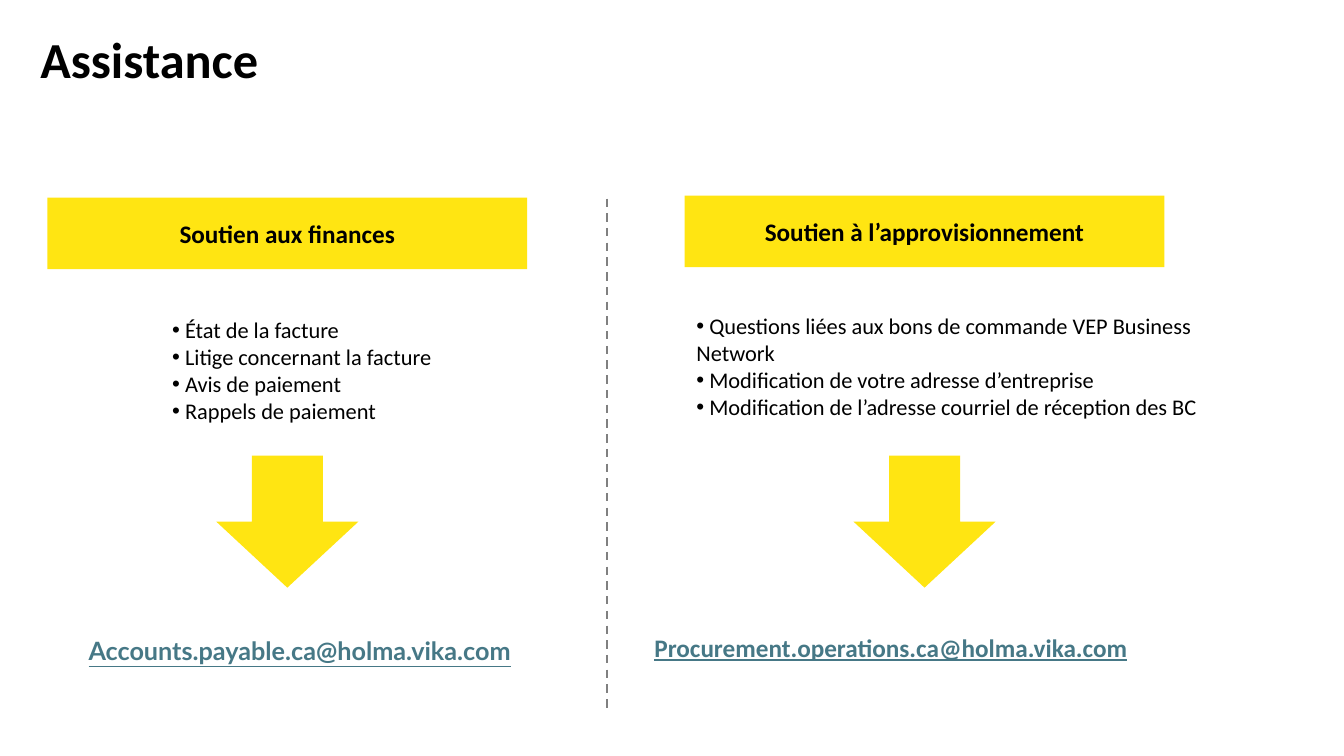
import pptx
import pptx.util
import pptx.dml.color
import pptx.enum.dml
import pptx.enum.shapes
import pptx.enum.text
import pptx.oxml
import pptx.oxml.ns

Inches = pptx.util.Inches
Pt = pptx.util.Pt
Kind = pptx.enum.shapes.MSO_SHAPE
Align = pptx.enum.text.PP_ALIGN
Anchor = pptx.enum.text.MSO_ANCHOR

COLORS = {"ink": "000000", "yellow": "FFE512", "link": "467886", "rule": "808080"}


def color(name):
    """Return the named colour."""
    return pptx.dml.color.RGBColor.from_string(COLORS[name])


def write(para, text, size, bold=False, tint="ink", face="Calibri", line=False):
    """Add one formatted run to a paragraph."""
    run = para.add_run()
    run.text = text
    font = run.font
    font.name, font.size, font.bold = face, Pt(size), bold
    font.color.rgb = color(tint)
    if line:
        font.underline = True


def block(slide, kind, x, y, w, h):
    """Add a plain yellow shape."""
    shape = slide.shapes.add_shape(kind, Inches(x), Inches(y), Inches(w), Inches(h))
    shape.shadow.inherit = False
    shape.fill.solid()
    shape.fill.fore_color.rgb = color("yellow")
    shape.line.fill.background()
    return shape


def area(slide, x, y, w, h):
    """Add a wrapping text box and return its frame."""
    frame = slide.shapes.add_textbox(Inches(x), Inches(y), Inches(w), Inches(h)).text_frame
    frame.word_wrap = True
    return frame


def heading(slide, x, y, w, h):
    """Place the slide title."""
    title = slide.shapes.title
    title.left, title.top, title.width, title.height = map(Inches, (x, y, w, h))
    frame = title.text_frame
    frame.auto_size = pptx.enum.text.MSO_AUTO_SIZE.NONE
    frame.vertical_anchor = Anchor.TOP
    para = frame.paragraphs[0]
    para.alignment = Align.LEFT
    para.line_spacing = 1.0
    write(para, "Assistance", 36, True)


def column(slide, x, y, w, label):
    """Place a banner with a down arrow centred below it."""
    banner = block(slide, Kind.RECTANGLE, x, y, w, 0.71)
    frame = banner.text_frame
    frame.vertical_anchor = Anchor.MIDDLE
    para = frame.paragraphs[0]
    para.alignment = Align.CENTER
    write(para, label, 18, True)
    wide = 1.41
    block(slide, Kind.DOWN_ARROW, x + (w - wide) / 2, 4.52, wide, 1.31)


def topics(slide, x, y, w, h, items):
    """Place a bulleted list."""
    frame = area(slide, x, y, w, h)
    for i, item in enumerate(items):
        para = frame.add_paragraph() if i else frame.paragraphs[0]
        props = para._p.get_or_add_pPr()
        props.set("marL", "0")
        props.set("indent", "0")
        font = pptx.oxml.ns.qn("a:buFont")
        props.append(props.makeelement(font, {"typeface": "Arial"}))
        mark = pptx.oxml.ns.qn("a:buChar")
        props.append(props.makeelement(mark, {"char": "•"}))
        write(para, " " + item, 16)


def mail(slide, x, y, w, h, text):
    """Place an address in a one-cell table."""
    table = slide.shapes.add_table(1, 1, Inches(x), Inches(y), Inches(w), Inches(h)).table
    table.first_row = table.horz_banding = False
    cell = table.cell(0, 0)
    cell.fill.background()
    cell.vertical_anchor = Anchor.MIDDLE
    cell.margin_left = cell.margin_right = Inches(0.05)
    cell.margin_top = cell.margin_bottom = Inches(0.03)
    write(cell.text_frame.paragraphs[0], text, 18, True, "link", line=True)


def divide(slide, x, top, end):
    """Draw the dashed line between the columns."""
    rule = slide.shapes.add_connector(
        pptx.enum.shapes.MSO_CONNECTOR.STRAIGHT,
        Inches(x), Inches(top), Inches(x), Inches(end))
    rule.line.color.rgb = color("rule")
    rule.line.width = Pt(1.5)
    rule.line.dash_style = pptx.enum.dml.MSO_LINE.DASH
    props = rule._element.spPr
    props.append(props.makeelement(pptx.oxml.ns.qn("a:effectLst"), {}))


def main():
    """Build and save the slide."""
    deck = pptx.Presentation()
    deck.slide_width, deck.slide_height = Inches(13.33), Inches(7.5)
    slide = deck.slides.add_slide(deck.slide_layouts[5])
    heading(slide, 0.3, 0.23, 6.37, 0.71)
    divide(slide, 6.02, 1.97, 7.08)

    column(slide, 0.47, 1.96, 4.76, "Soutien aux finances")
    topics(slide, 1.61, 3.09, 3.13, 1.45, [
        "État de la facture",
        "Litige concernant la facture",
        "Avis de paiement",
        "Rappels de paiement",
    ])
    frame = area(slide, 0.78, 6.25, 5.02, 1.01)
    write(frame.paragraphs[0], "Accounts.payable.ca@holma.vika.com",
          18, True, "link", "Lato", True)

    column(slide, 6.79, 1.94, 4.76, "Soutien à l’approvisionnement")
    topics(slide, 6.81, 3.05, 5.26, 1.45, [
        "Questions liées aux bons de commande VEP Business Network",
        "Modification de votre adresse d’entreprise",
        "Modification de l’adresse courriel de réception des BC",
    ])
    mail(slide, 6.44, 5.96, 6.2, 0.95, "Procurement.operations.ca@holma.vika.com")
    deck.save("out.pptx")


if __name__ == "__main__":
    main()
